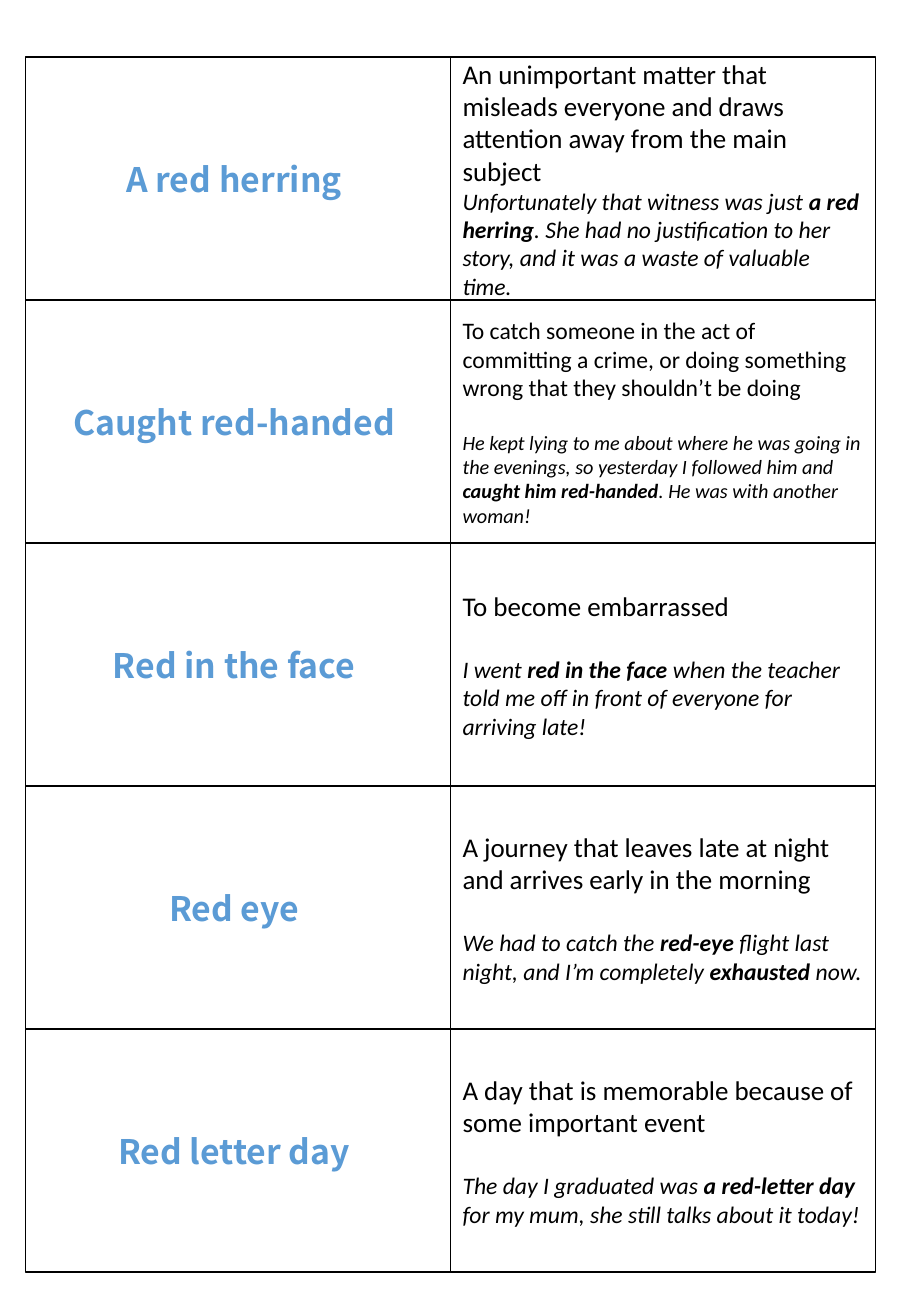
from pptx import Presentation
from pptx.dml.color import RGBColor
from pptx.enum.shapes import MSO_SHAPE
from pptx.enum.text import MSO_ANCHOR, PP_ALIGN
from pptx.util import Inches, Pt

RECTANGLE = MSO_SHAPE.RECTANGLE
MIDDLE = MSO_ANCHOR.MIDDLE
LEFT, CENTER = PP_ALIGN.LEFT, PP_ALIGN.CENTER

# Content: idiom, meaning, example (** marks bold), meaning size, example size, gap
IDIOMS = [
    ("A red herring ",
     "An unimportant matter that misleads everyone and draws attention away "
     "from the main subject",
     "Unfortunately that witness was just **a red herring**. She had no "
     "justification to her story, and it was a waste of valuable time.",
     16, 14, False),
    ("Caught red-handed ",
     "To catch someone in the act of committing a crime, or doing something "
     "wrong that they shouldn’t be doing",
     "He kept lying to me about where he was going in the evenings, so "
     "yesterday I followed him and **caught him red-handed**. He was with "
     "another woman!",
     14, 12, True),
    ("Red in the face ",
     "To become embarrassed",
     "I went** red in the face** when the teacher told me off in front of "
     "everyone for arriving late!",
     16, 14, True),
    ("Red eye ",
     "A journey that leaves late at night and arrives early in the morning",
     "We had to catch the **red-eye** flight last night, and I’m "
     "completely **exhausted** now.",
     16, 14, True),
    ("Red letter day ",
     "A day that is memorable because of some important event",
     "The day I graduated was **a red-letter day** for my mum, she still "
     "talks about it today!",
     16, 14, True),
]

# Card grid and style
GRID_LEFT, GRID_TOP = 0.21, 0.47
CARD_WIDTH, CARD_HEIGHT = 3.5, 2
LINE_HEIGHT = 1.22
IDIOM_FONT, TEXT_FONT = "Noto Sans CJK KR", "Calibri"
WHITE, BLACK, BLUE = "FFFFFF", "000000", "5B9BD5"


def color(hex_text):
    return RGBColor.from_string(hex_text)


def write(paragraph, text, size, font=TEXT_FONT, fill=BLACK, bold=False,
          italic=False, align=LEFT, before=0):
    """Write text into a paragraph, switching bold at each ** mark."""
    paragraph.alignment = align
    if before:
        paragraph.space_before = Pt(before)
    for index, part in enumerate(text.split("**")):
        run = paragraph.add_run()
        run.text = part
        run.font.size = Pt(size)
        run.font.name = font
        run.font.color.rgb = color(fill)
        run.font.bold = bold or index % 2 == 1
        run.font.italic = italic


def add_card(slide, row, column):
    shape = slide.shapes.add_shape(
        RECTANGLE,
        Inches(GRID_LEFT + column * CARD_WIDTH),
        Inches(GRID_TOP + row * CARD_HEIGHT),
        Inches(CARD_WIDTH), Inches(CARD_HEIGHT))
    shape.shadow.inherit = False
    shape.fill.solid()
    shape.fill.fore_color.rgb = color(WHITE)
    shape.line.color.rgb = color(BLACK)
    shape.line.width = Pt(1)
    shape.text_frame.word_wrap = True
    shape.text_frame.vertical_anchor = MIDDLE
    return shape.text_frame


def main():
    presentation = Presentation()
    presentation.slide_width = Inches(7.5)
    presentation.slide_height = Inches(10.83)
    slide = presentation.slides.add_slide(presentation.slide_layouts[6])

    for row, (idiom, meaning, example, meaning_size, example_size, gap) in enumerate(IDIOMS):
        # Idiom on the left
        idiom_frame = add_card(slide, row, 0)
        write(idiom_frame.paragraphs[0], idiom, 20, font=IDIOM_FONT, fill=BLUE,
              bold=True, align=CENTER)

        # Meaning and example on the right
        text_frame = add_card(slide, row, 1)
        write(text_frame.paragraphs[0], meaning, meaning_size)
        write(text_frame.add_paragraph(), example, example_size, italic=True,
              before=round(meaning_size * LINE_HEIGHT, 1) if gap else 0)

    presentation.save("out.pptx")


if __name__ == "__main__":
    main()
